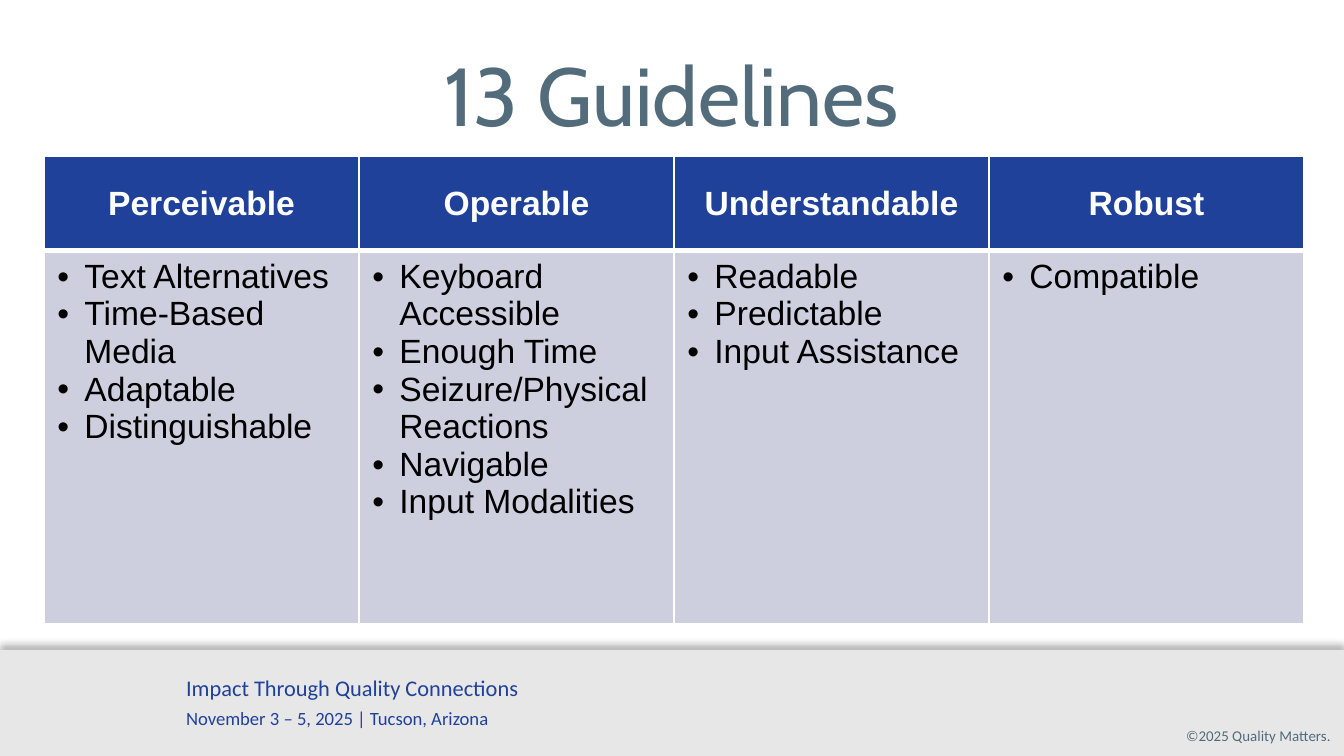
from lxml import etree
from pptx import Presentation
from pptx.dml.color import RGBColor
from pptx.enum.shapes import MSO_SHAPE
from pptx.enum.text import MSO_ANCHOR as ANCHOR, MSO_AUTO_SIZE as FIT, PP_ALIGN as ALIGN
from pptx.oxml import parse_xml
from pptx.oxml.ns import nsdecls, qn
from pptx.util import Pt

PX = 9144000 / 1344
COLORS = {"blue": "1F419A", "slate": "526C7C", "band": "E7E7E7",
          "cell": "CDCFDE", "white": "FFFFFF", "black": "000000"}

GUIDELINES = {
    "Perceivable": ["Text Alternatives", "Time-Based Media", "Adaptable", "Distinguishable"],
    "Operable": ["Keyboard Accessible", "Enough Time", "Seizure/Physical Reactions",
                 "Navigable", "Input Modalities"],
    "Understandable": ["Readable", "Predictable", "Input Assistance"],
    "Robust": ["Compatible"],
}


def px(n):
    return round(n * PX)


def rgb(name):
    return RGBColor.from_string(COLORS[name])


class SlideBuilder:
    """Holds the current slide and draws each kind of element on it."""

    def __init__(self, prs):
        self.slide = prs.slides.add_slide(prs.slide_layouts[5])

    def add_run(self, p, text, size, font, color, bold=False):
        r = p.add_run()
        r.text = text
        r.font.size = Pt(size)
        r.font.name = font
        r.font.bold = bold
        r.font.color.rgb = rgb(color)

    def title(self, text, *box):
        sp = self.slide.shapes.title
        sp.left, sp.top, sp.width, sp.height = map(px, box)
        tf = sp.text_frame
        tf.auto_size = FIT.NONE
        tf.vertical_anchor = ANCHOR.MIDDLE
        p = tf.paragraphs[0]
        p.alignment = ALIGN.CENTER
        self.add_run(p, text, 44, "Cabin", "slate")

    def footer_band(self, *box):
        sp = self.slide.shapes.add_shape(MSO_SHAPE.RECTANGLE, *map(px, box))
        sp.fill.solid()
        sp.fill.fore_color.rgb = rgb("band")
        sp.line.fill.background()
        sp._element.spPr.append(parse_xml(
            f'<a:effectLst {nsdecls("a")}>'
            f'<a:outerShdw blurRad="{Pt(4)}" dist="{Pt(3)}" dir="16200000" rotWithShape="0">'
            f'<a:srgbClr val="{COLORS["black"]}"><a:alpha val="30000"/></a:srgbClr>'
            '</a:outerShdw></a:effectLst>'))

    def text(self, lines, box, color, align=ALIGN.LEFT, right_inset=13):
        """Add a text box; lines are (text, size) pairs."""
        tf = self.slide.shapes.add_textbox(*map(px, box)).text_frame
        tf.word_wrap = True
        tf.margin_right = px(right_inset)
        for i, (text, size) in enumerate(lines):
            p = tf.add_paragraph() if i else tf.paragraphs[0]
            if i:
                p.space_before = Pt(3)
            p.alignment = align
            self.add_run(p, text, size, "Calibri", color)

    def bullet(self, p):
        pPr = p._p.get_or_add_pPr()
        pPr.set("marL", str(px(27)))
        pPr.set("indent", str(-px(27)))
        color = etree.SubElement(pPr, qn("a:buClr"))
        etree.SubElement(color, qn("a:srgbClr"), val=COLORS["black"])
        etree.SubElement(pPr, qn("a:buFont"), typeface="Arial")
        etree.SubElement(pPr, qn("a:buChar"), char="•")

    def style_cell(self, cell, fill, top, bottom):
        """Set white borders, with top and bottom widths in points, and a fill."""
        tcPr = cell._tc.get_or_add_tcPr()
        for side, width in zip("LRTB", (1, 1, top, bottom)):
            ln = etree.SubElement(tcPr, qn(f"a:ln{side}"), w=str(Pt(width)))
            solid = etree.SubElement(ln, qn("a:solidFill"))
            etree.SubElement(solid, qn("a:srgbClr"), val=COLORS["white"])
        cell.fill.solid()
        cell.fill.fore_color.rgb = rgb(fill)

    def table(self, columns, left, top, col_width, row_heights):
        table = self.slide.shapes.add_table(
            2, len(columns), px(left), px(top),
            px(col_width * len(columns)), px(sum(row_heights))).table
        for row, height in zip(table.rows, row_heights):
            row.height = px(height)
        for i, (heading, items) in enumerate(columns.items()):
            table.columns[i].width = px(col_width)
            head, body = table.cell(0, i), table.cell(1, i)
            self.style_cell(head, "blue", 1, 3)
            self.style_cell(body, "cell", 3, 1)
            head.vertical_anchor = ANCHOR.MIDDLE
            p = head.text_frame.paragraphs[0]
            p.alignment = ALIGN.CENTER
            self.add_run(p, heading, 18, "Arial", "white", bold=True)
            tf = body.text_frame
            for j, item in enumerate(items):
                p = tf.add_paragraph() if j else tf.paragraphs[0]
                self.bullet(p)
                self.add_run(p, item, 18, "Arial", "black")


def main():
    prs = Presentation()
    prs.slide_width, prs.slide_height = px(1344), px(756)
    s = SlideBuilder(prs)
    s.footer_band(0, 650, 1344, 106)
    s.text([("©2025 Quality Matters.", 8)], (1118, 720, 213, 32), "slate", ALIGN.RIGHT, 0)
    s.text([("Impact Through Quality Connections", 12),
            ("November 3 – 5, 2025 | Tucson, Arizona", 10)], (173, 668, 859, 69), "blue")
    s.title("13 Guidelines", 67, 31, 1210, 126)
    s.table(GUIDELINES, 44, 156, 315, (95, 373))
    prs.save("out.pptx")


if __name__ == "__main__":
    main()
